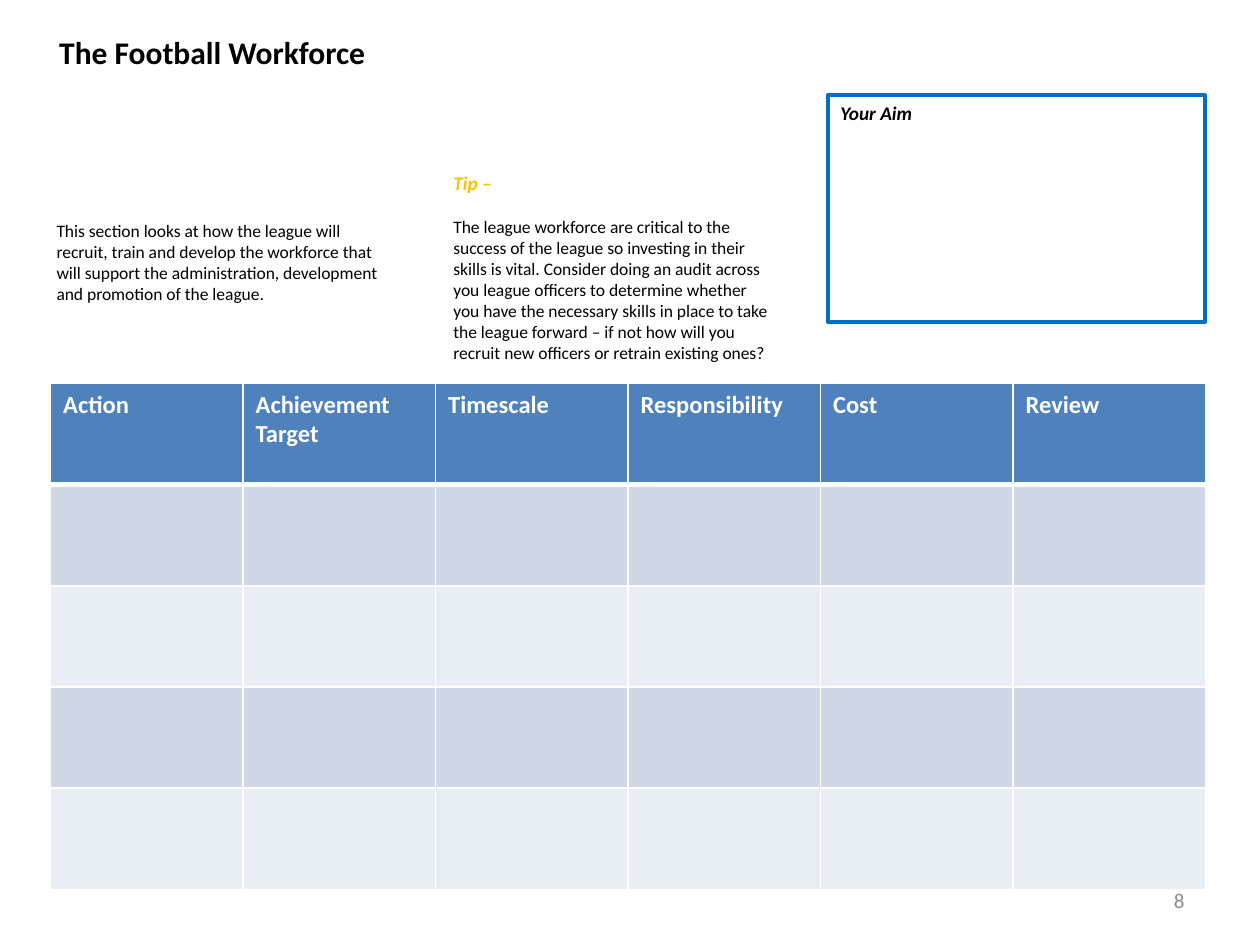
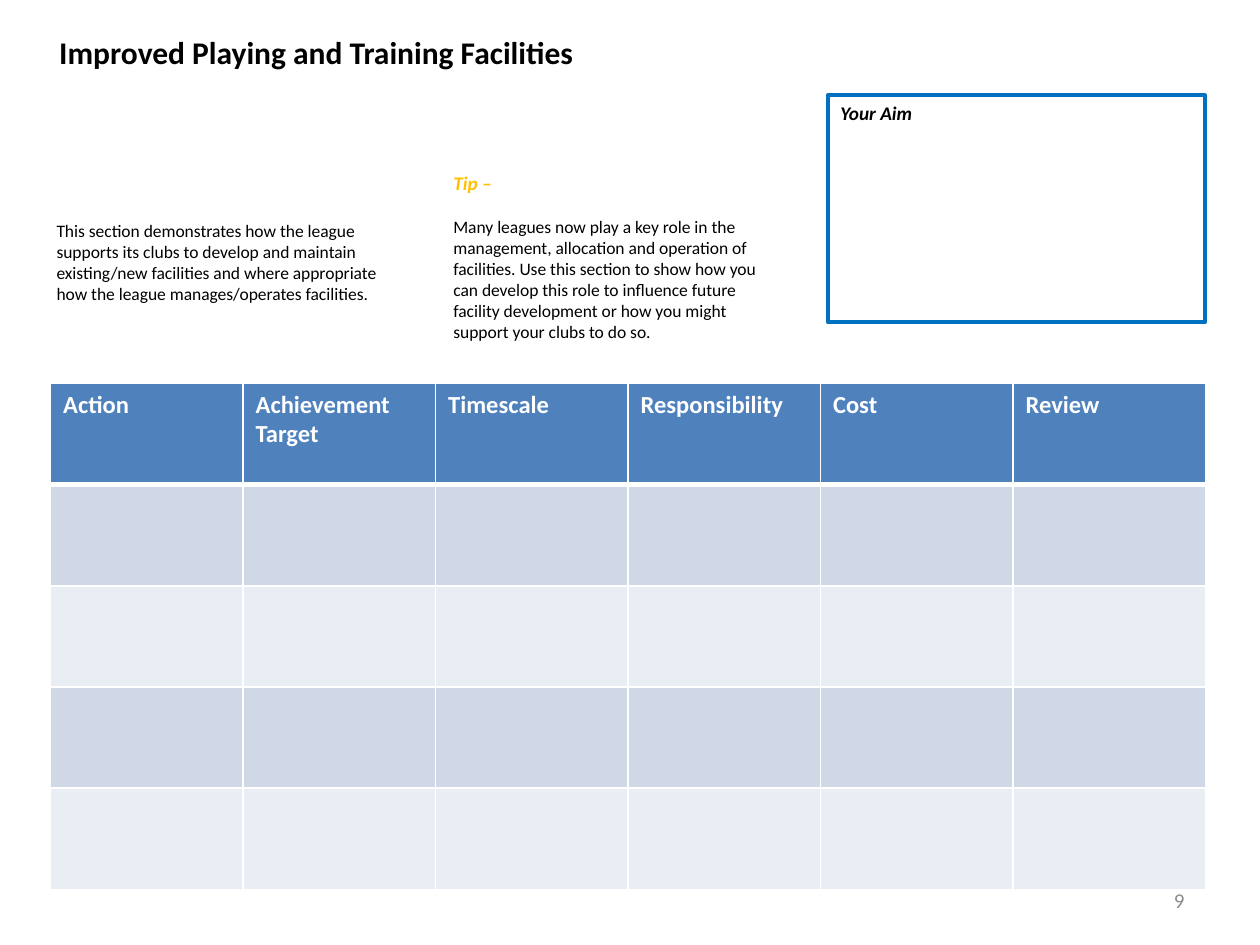
from pptx import Presentation
from pptx.dml.color import RGBColor
from pptx.enum import shapes, text
from pptx.oxml import ns, xmlchemy
from pptx.util import Cm, Pt

FONT = "Calibri"
BLACK = RGBColor(0x00, 0x00, 0x00)
WHITE = RGBColor(0xFF, 0xFF, 0xFF)
TIP_YELLOW = RGBColor(0xFF, 0xC0, 0x00)
AIM_BLUE = RGBColor(0x00, 0x70, 0xC0)
HEADER_BLUE = RGBColor(0x4F, 0x81, 0xBD)
BANDS = (RGBColor(0xD0, 0xD8, 0xE8), RGBColor(0xE9, 0xED, 0xF4))
NUMBER_GREY = RGBColor(0x8C, 0x8C, 0x8C)

HEADINGS = ("Action", "Achievement Target", "Timescale",
            "Responsibility", "Cost", "Review")
ACTION_ROWS = 4
COL_WIDTH, ROW_HEIGHT = Cm(3.88), Cm(2.04)
FIRST_NUMBER = 8

SECTIONS = (
    ("The Football Workforce",
     "This section looks at how the league will recruit, train and develop "
     "the workforce that will support the administration, development and "
     "promotion of the league.",
     "The league workforce are critical to the success of the league so "
     "investing in their skills is vital. Consider doing an audit across you "
     "league officers to determine whether you have the necessary skills in "
     "place to take the league forward – if not how will you recruit new "
     "officers or retrain existing ones?"),
    ("Improved Playing and Training Facilities",
     "This section demonstrates how the league supports its clubs to develop "
     "and maintain existing/new facilities and where appropriate how the "
     "league manages/operates facilities.",
     "Many leagues now play a key role in the management, allocation and "
     "operation of facilities. Use this section to show how you can develop "
     "this role to influence future facility development or how you might "
     "support your clubs to do so."),
)


def write(p, content, size=10, color=BLACK, bold=False, italic=False,
          align=text.PP_ALIGN.LEFT, before=0):
    p.alignment = align
    p.space_before = Pt(before)
    r = p.add_run()
    r.text = content
    r.font.name, r.font.size = FONT, Pt(size)
    r.font.bold, r.font.italic = bold, italic
    r.font.color.rgb = color


def add_title(s, content):
    sp = s.shapes.title
    sp.left, sp.top, sp.width, sp.height = Cm(0.94), Cm(0.53), Cm(14), Cm(1.02)
    tf = sp.text_frame
    tf.auto_size = text.MSO_AUTO_SIZE.NONE
    tf.vertical_anchor = text.MSO_ANCHOR.TOP
    write(tf.paragraphs[0], content, size=18, bold=True)


def add_text_box(s, left, top, width, height, anchor=text.MSO_ANCHOR.TOP):
    tf = s.shapes.add_textbox(left, top, width, height).text_frame
    tf.word_wrap = True
    tf.vertical_anchor = anchor
    return tf


def add_aim_box(s):
    sp = s.shapes.add_shape(shapes.MSO_SHAPE.RECTANGLE,
                            Cm(16.69), Cm(1.92), Cm(7.6), Cm(4.58))
    sp.shadow.inherit = False
    sp.fill.background()
    sp.line.color.rgb = AIM_BLUE
    sp.line.width = Pt(2.25)
    line = sp.element.spPr.find(ns.qn("a:ln"))
    line.append(xmlchemy.OxmlElement("a:round"))
    tf = sp.text_frame
    tf.vertical_anchor = text.MSO_ANCHOR.TOP
    write(tf.paragraphs[0], "Your Aim", size=11, bold=True, italic=True)


def add_tip(s, advice):
    tf = add_text_box(s, Cm(8.89), Cm(3.33), Cm(7.01), Cm(4.14))
    write(tf.paragraphs[0], "Tip –", size=11, color=TIP_YELLOW,
          bold=True, italic=True)
    write(tf.add_paragraph(), advice, before=12.2)


def set_borders(cell, **widths):
    """Draw white borders; widths are points keyed by side L, R, T or B."""
    tc_pr = cell._tc.get_or_add_tcPr()
    for side, width in widths.items():
        ln = xmlchemy.OxmlElement(f"a:ln{side}")
        ln.set("w", str(Pt(width)))
        fill = xmlchemy.OxmlElement("a:solidFill")
        color = xmlchemy.OxmlElement("a:srgbClr")
        color.set("val", str(WHITE))
        fill.append(color)
        ln.append(fill)
        tc_pr.append(ln)


def add_action_table(s):
    rows, cols = ACTION_ROWS + 1, len(HEADINGS)
    table = s.shapes.add_table(rows, cols, Cm(1.02), Cm(7.73),
                               COL_WIDTH * cols, ROW_HEIGHT * rows).table
    for col in table.columns:
        col.width = COL_WIDTH
    for i, row in enumerate(table.rows):
        row.height = ROW_HEIGHT
        for cell in row.cells:
            set_borders(cell, L=1, R=1, T=3 if i == 1 else 1,
                        B=3 if i == 0 else 1)
            cell.fill.solid()
            cell.fill.fore_color.rgb = BANDS[(i - 1) % 2] if i else HEADER_BLUE
    for cell, heading in zip(table.rows[0].cells, HEADINGS):
        write(cell.text_frame.paragraphs[0], heading, size=14,
              color=WHITE, bold=True)


def add_page_number(s, number):
    tf = add_text_box(s, Cm(18.2), Cm(17.65), Cm(5.93), Cm(1.01),
                      anchor=text.MSO_ANCHOR.MIDDLE)
    write(tf.paragraphs[0], str(number), size=12, color=NUMBER_GREY,
          align=text.PP_ALIGN.RIGHT)


def add_section(prs, number, title, purpose, advice):
    s = prs.slides.add_slide(prs.slide_layouts[5])
    add_aim_box(s)
    intro = add_text_box(s, Cm(0.89), Cm(4.31), Cm(7.01), Cm(1.96))
    write(intro.paragraphs[0], purpose)
    add_tip(s, advice)
    add_title(s, title)
    add_action_table(s)
    add_page_number(s, number)


def main():
    prs = Presentation()
    prs.slide_width, prs.slide_height = Cm(25.4), Cm(19.05)
    for number, section in enumerate(SECTIONS, FIRST_NUMBER):
        add_section(prs, number, *section)
    prs.save("out.pptx")


if __name__ == "__main__":
    main()
